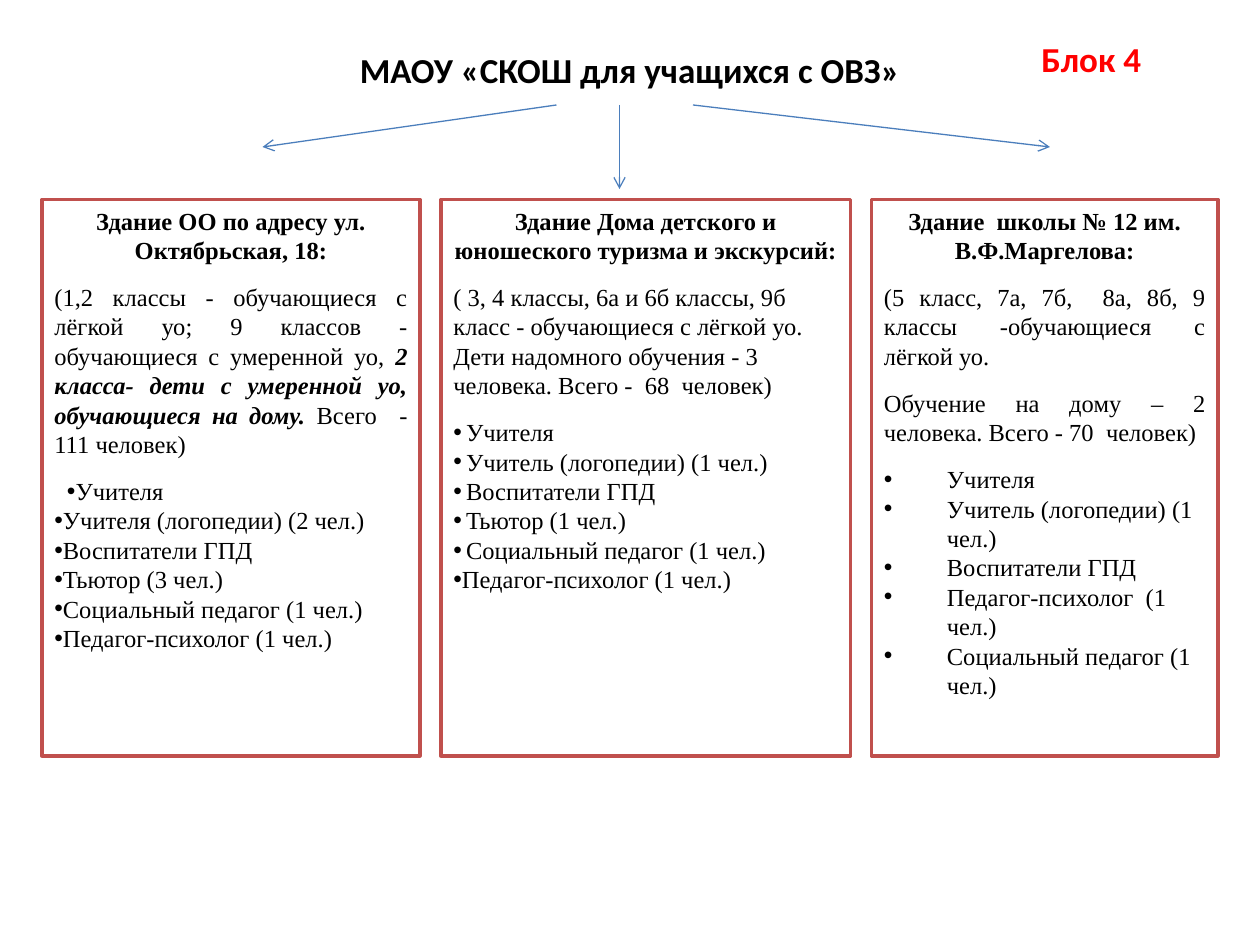
from dataclasses import dataclass

from lxml import etree
from pptx import Presentation
from pptx.dml.color import RGBColor
from pptx.enum.shapes import MSO_CONNECTOR, MSO_SHAPE
from pptx.enum.text import MSO_ANCHOR, MSO_AUTO_SIZE, PP_ALIGN
from pptx.oxml.ns import qn
from pptx.util import Pt

LEFT, CENTER, JUSTIFY = PP_ALIGN.LEFT, PP_ALIGN.CENTER, PP_ALIGN.JUSTIFY
TOP, NO_AUTOFIT = MSO_ANCHOR.TOP, MSO_AUTO_SIZE.NONE
RECTANGLE, STRAIGHT = MSO_SHAPE.RECTANGLE, MSO_CONNECTOR.STRAIGHT


@dataclass(frozen=True)
class Theme:
    text: RGBColor = RGBColor(0x00, 0x00, 0x00)
    accent: RGBColor = RGBColor(0xFF, 0x00, 0x00)
    card_fill: RGBColor = RGBColor(0xFF, 0xFF, 0xFF)
    card_line: RGBColor = RGBColor(0xC0, 0x50, 0x4D)
    arrow: RGBColor = RGBColor(0x4B, 0x7E, 0xBC)
    heading_font: str = "Calibri"
    body_font: str = "Times New Roman"
    heading_size: int = 20
    body_size: int = 14


THEME = Theme()

TITLE = "МАОУ «СКОШ для учащихся с ОВЗ»"
BLOCK_LABEL = "Блок 4"

# Descriptions are paragraphs of (text, emphasised) runs.
# Staff are (text, level, left margin, first-line indent, alignment).
BUILDINGS = [
    {
        "width": 216,
        "name": "Здание ОО по адресу ул. Октябрьская, 18:",
        "description_align": JUSTIFY,
        "description": [[
            ("(1,2 классы - обучающиеся с лёгкой уо; 9 классов - "
             "обучающиеся с умеренной уо, ", False),
            ("2 класса- дети с умеренной уо, обучающиеся на дому.", True),
            (" Всего  - 111 человек)", False),
        ]],
        "staff": [
            ("Учителя", 1, 0, 7.2, JUSTIFY),
            ("Учителя (логопедии) (2 чел.)", 0, 0, 0, LEFT),
            ("Воспитатели ГПД", 0, 0, 0, LEFT),
            ("Тьютор (3 чел.)", 0, 0, 0, LEFT),
            ("Социальный педагог (1 чел.)", 0, 0, 0, LEFT),
            ("Педагог-психолог (1 чел.)", 0, 0, 0, LEFT),
        ],
    },
    {
        "width": 234,
        "name": "Здание Дома детского и юношеского туризма и экскурсий:",
        "description_align": LEFT,
        "description": [[
            ("( 3, 4 классы, 6а и 6б классы, 9б класс - обучающиеся с лёгкой "
             "уо. Дети надомного обучения - 3 человека. "
             "Всего -  68  человек)", False),
        ]],
        "staff": [
            ("Учителя", 1, 7.2, -7.2, LEFT),
            ("Учитель (логопедии) (1 чел.)", 1, 7.2, -7.2, LEFT),
            ("Воспитатели ГПД", 1, 7.2, -7.2, LEFT),
            ("Тьютор (1 чел.)", 1, 7.2, -7.2, LEFT),
            ("Социальный педагог (1 чел.)", 1, 7.2, -7.2, LEFT),
            ("Педагог-психолог (1 чел.)", 0, 0, 0, LEFT),
        ],
    },
    {
        "width": 198,
        "name": "Здание  школы № 12 им. В.Ф.Маргелова:",
        "description_align": JUSTIFY,
        "description": [
            [("(5 класс, 7а, 7б,  8а, 8б, 9 классы -обучающиеся с лёгкой уо. ",
              False)],
            [("Обучение на дому – 2 человека. Всего - 70  человек)", False)],
        ],
        "staff": [
            ("Учителя", 1, 36, -36, JUSTIFY),
            ("Учитель (логопедии) (1 чел.)", 0, 36, -36, LEFT),
            ("Воспитатели ГПД", 0, 36, -36, LEFT),
            ("Педагог-психолог  (1 чел.)", 0, 36, -36, LEFT),
            ("Социальный педагог (1 чел.)", 0, 36, -36, LEFT),
        ],
    },
]

CARD_LEFT, CARD_TOP, CARD_HEIGHT, CARD_GAP = 24, 114, 318, 12
ARROW_TOP = 60
ARROWS = [(318, 150, 84), (396, 600, 84), (354, 354, 108)]  # start x, end x, end y


def add_run(paragraph, text, font, size, color, bold=False, italic=False):
    run = paragraph.add_run()
    run.text = text
    run.font.name = font
    run.font.size = Pt(size)
    run.font.color.rgb = color
    run.font.bold = bold
    run.font.italic = italic


def add_body_run(paragraph, text, bold=False, italic=False):
    add_run(paragraph, text, THEME.body_font, THEME.body_size, THEME.text,
            bold, italic)


def fill_heading(shape, text, color, align):
    frame = shape.text_frame
    frame.word_wrap = True
    frame.auto_size = NO_AUTOFIT
    frame.vertical_anchor = TOP
    frame.paragraphs[0].alignment = align
    add_run(frame.paragraphs[0], text, THEME.heading_font, THEME.heading_size,
            color, bold=True)


def set_bullet(paragraph, margin, indent):
    properties = paragraph._p.get_or_add_pPr()
    properties.set("marL", str(Pt(margin)))
    properties.set("indent", str(Pt(indent)))
    etree.SubElement(properties, qn("a:buFont")).set("typeface", "Arial")
    etree.SubElement(properties, qn("a:buChar")).set("char", "•")


def add_building(slide, building, left):
    card = slide.shapes.add_shape(RECTANGLE, Pt(left), Pt(CARD_TOP),
                                  Pt(building["width"]), Pt(CARD_HEIGHT))
    card.shadow.inherit = False
    card.fill.solid()
    card.fill.fore_color.rgb = THEME.card_fill
    card.line.color.rgb = THEME.card_line
    card.line.width = Pt(2)
    frame = card.text_frame
    frame.word_wrap = True
    frame.vertical_anchor = TOP

    name = frame.paragraphs[0]
    name.alignment = CENTER
    name.space_after = Pt(10)
    add_body_run(name, building["name"], bold=True)
    for runs in building["description"]:
        paragraph = frame.add_paragraph()
        paragraph.alignment = building["description_align"]
        paragraph.space_after = Pt(10)
        for text, emphasised in runs:
            add_body_run(paragraph, text, emphasised, emphasised)
    for text, level, margin, indent, align in building["staff"]:
        paragraph = frame.add_paragraph()
        paragraph.level = level
        paragraph.alignment = align
        set_bullet(paragraph, margin, indent)
        add_body_run(paragraph, text)


def add_arrow(slide, start_x, end_x, end_y):
    arrow = slide.shapes.add_connector(STRAIGHT, Pt(start_x), Pt(ARROW_TOP),
                                       Pt(end_x), Pt(end_y))
    arrow.line.color.rgb = THEME.arrow
    arrow.line.width = Pt(0.75)
    etree.SubElement(arrow.line._get_or_add_ln(), qn("a:tailEnd")).set("type", "arrow")
    etree.SubElement(arrow._element.spPr, qn("a:effectLst"))


def main():
    deck = Presentation()
    deck.slide_width, deck.slide_height = Pt(720), Pt(540)
    slide = deck.slides.add_slide(deck.slide_layouts[5])

    title = slide.shapes.title
    title.left, title.top, title.width, title.height = Pt(150), Pt(24), Pt(420), Pt(31.5)
    fill_heading(title, TITLE, THEME.text, CENTER)
    label = slide.shapes.add_textbox(Pt(588), Pt(18), Pt(96.5), Pt(31.5))
    fill_heading(label, BLOCK_LABEL, THEME.accent, LEFT)

    left = CARD_LEFT
    for building in BUILDINGS:
        add_building(slide, building, left)
        left += building["width"] + CARD_GAP
    for arrow in ARROWS:
        add_arrow(slide, *arrow)

    deck.save("out.pptx")


if __name__ == "__main__":
    main()
